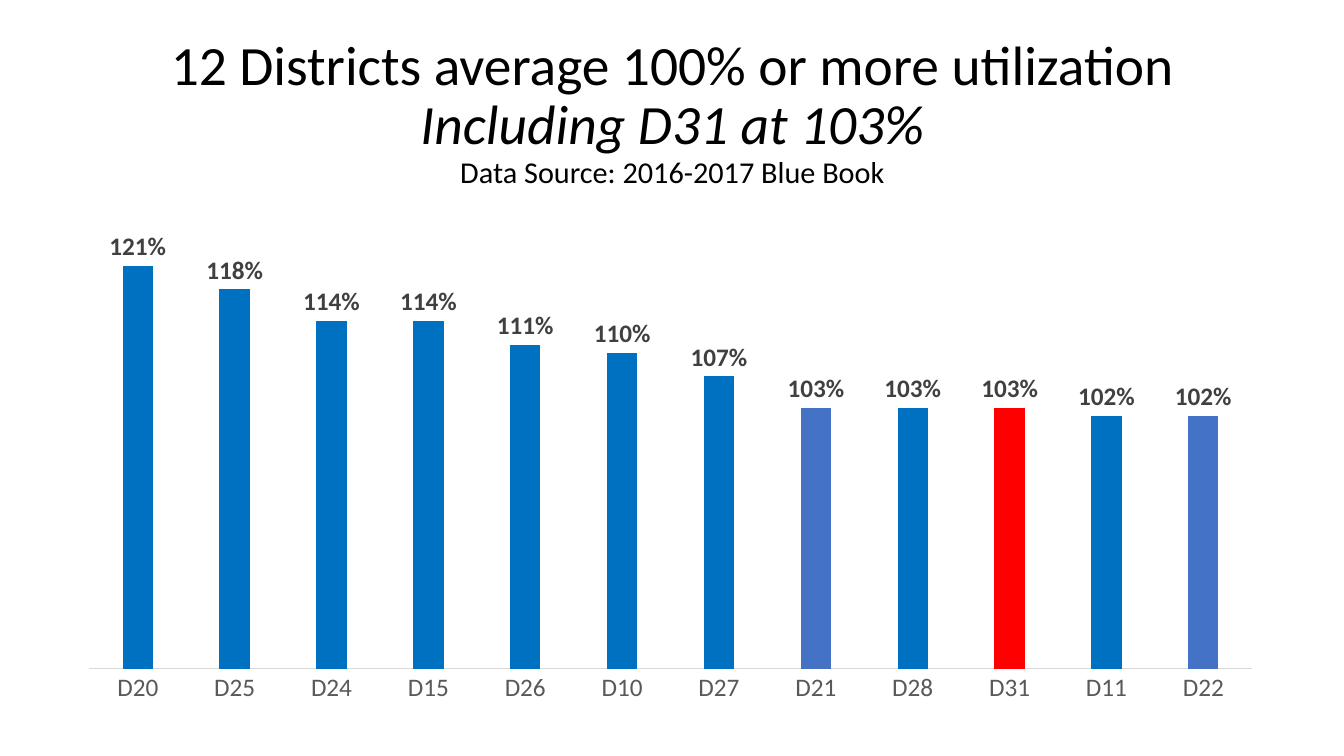
from copy import deepcopy

from lxml import etree
from pptx import Presentation
from pptx.chart.data import CategoryChartData
from pptx.dml.color import RGBColor
from pptx.enum.chart import XL_CHART_TYPE as ChartType, XL_LABEL_POSITION as LabelPosition
from pptx.enum.chart import XL_TICK_MARK as TickMark
from pptx.enum.text import MSO_ANCHOR as Anchor, MSO_AUTO_SIZE as AutoSize, PP_ALIGN as Align
from pptx.util import Inches, Pt

FONT = "Calibri"
HEADLINE = [
    ("12 Districts average 100% or more utilization", 39.6, False),
    ("Including D31 at 103%", 39.6, True),
    ("Data Source: 2016-2017 Blue Book", 21.6, False),
]
UTILIZATION = {
    "D20": 1.21, "D25": 1.18, "D24": 1.14, "D15": 1.14, "D26": 1.11, "D10": 1.10,
    "D27": 1.07, "D21": 1.03, "D28": 1.03, "D31": 1.03, "D11": 1.02, "D22": 1.02,
}
SERIES_COLOR = "4472C4"
DISTRICT_COLOR = "0070C0"
SPECIAL_COLORS = {"D31": "FF0000", "D21": SERIES_COLOR, "D22": SERIES_COLOR}


def rgb(value):
    return RGBColor.from_string(value)


def style_font(font, size, color, bold=False, italic=False):
    font.name = FONT
    font.size = Pt(size)
    font.bold = bold
    font.italic = italic
    font.color.rgb = rgb(color)


def fill_headline(headline, left, top, width, height):
    headline.left, headline.top = Inches(left), Inches(top)
    headline.width, headline.height = Inches(width), Inches(height)
    frame = headline.text_frame
    frame.word_wrap = True
    frame.auto_size = AutoSize.NONE
    frame.vertical_anchor = Anchor.MIDDLE
    paragraph = frame.paragraphs[0]
    paragraph.alignment = Align.CENTER
    paragraph.line_spacing = 0.9
    for index, (wording, size, italic) in enumerate(HEADLINE):
        run = paragraph.add_run()
        run.text = wording
        style_font(run.font, size, "000000", italic=italic)
        if index < len(HEADLINE) - 1:
            paragraph.add_line_break()
            paragraph._p[-1].append(deepcopy(run.font._element))


def set_plot_layout(chart, **fractions):
    plot_area = chart._chartSpace.chart.plotArea
    namespace = plot_area.nsmap["c"]
    for old_layout in plot_area.findall(f"{{{namespace}}}layout"):
        plot_area.remove(old_layout)
    layout = etree.Element(f"{{{namespace}}}layout")
    manual = etree.SubElement(layout, f"{{{namespace}}}manualLayout")
    settings = {"layoutTarget": "inner", "xMode": "edge", "yMode": "edge", **fractions}
    for tag, value in settings.items():
        etree.SubElement(manual, f"{{{namespace}}}{tag}", val=str(value))
    plot_area.insert(0, layout)


def add_utilization_chart(slide, left, top, width, height):
    data = CategoryChartData(number_format="0%")
    data.categories = list(UTILIZATION)
    data.add_series("Series 1", list(UTILIZATION.values()))
    chart = slide.shapes.add_chart(
        ChartType.COLUMN_CLUSTERED,
        Inches(left), Inches(top), Inches(width), Inches(height), data,
    ).chart
    chart.has_title = False
    chart.has_legend = False
    style_font(chart.font, 10, "000000")
    set_plot_layout(chart, x=0.03, y=0, w=0.97, h=0.91)

    districts = chart.category_axis
    districts.major_tick_mark = districts.minor_tick_mark = TickMark.NONE
    districts.format.line.color.rgb = rgb("D9D9D9")
    districts.format.line.width = Pt(0.75)
    style_font(districts.tick_labels.font, 18, "595959")

    percent = chart.value_axis
    percent.minimum_scale, percent.maximum_scale = 0.7, 1.3
    percent.has_major_gridlines = False
    percent.visible = False

    plot = chart.plots[0]
    plot.gap_width, plot.overlap = 219, -27
    plot.vary_by_categories = False
    columns = plot.series[0]
    columns.invert_if_negative = False
    columns.format.fill.solid()
    columns.format.fill.fore_color.rgb = rgb(SERIES_COLOR)
    for index, district in enumerate(UTILIZATION):
        color = SPECIAL_COLORS.get(district, DISTRICT_COLOR)
        if color != SERIES_COLOR:
            fill = columns.points[index].format.fill
            fill.solid()
            fill.fore_color.rgb = rgb(color)

    labels = columns.data_labels
    labels.show_value = True
    labels.position = LabelPosition.OUTSIDE_END
    labels.number_format = "0%"
    labels.number_format_is_linked = False
    style_font(labels.font, 18, "404040", bold=True)


def build_utilization_slide(deck):
    slide = deck.slides.add_slide(deck.slide_layouts[5])
    fill_headline(slide.shapes.title, 0.92, 0.4, 11.5, 1.45)
    add_utilization_chart(slide, 0.53, 1.93, 11.89, 5.17)


def main():
    deck = Presentation()
    deck.slide_width, deck.slide_height = Inches(13.33), Inches(7.5)
    build_utilization_slide(deck)
    deck.save("out.pptx")


if __name__ == "__main__":
    main()
